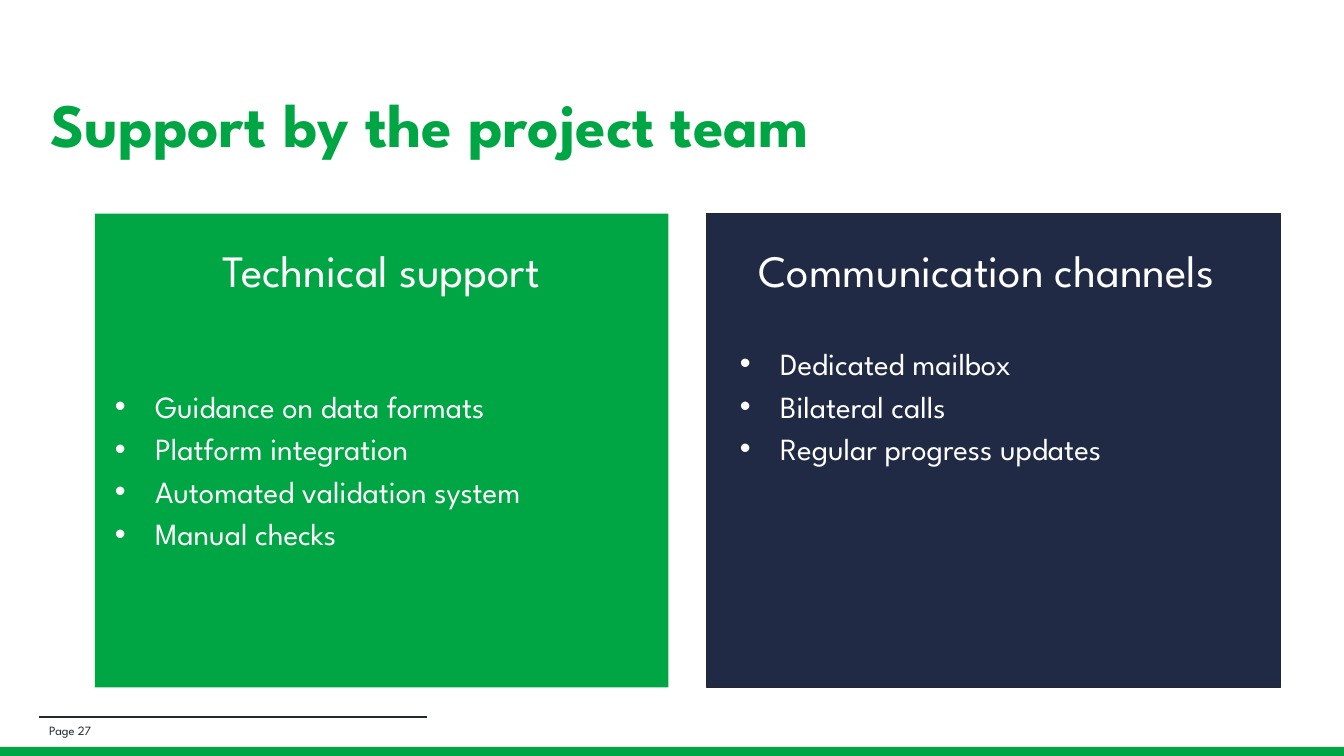
import pptx
import pptx.util
import pptx.dml.color
import pptx.enum.shapes
import pptx.enum.text
import pptx.oxml.ns
from lxml import etree
from pptx.util import Inches

COLORS = {"green": "00A643", "navy": "202A44", "ink": "24282A", "white": "FFFFFF"}
FONT = "League Spartan"
ALIGN = pptx.enum.text.PP_ALIGN
ANCHOR = pptx.enum.text.MSO_ANCHOR


def rgb(name):
    return pptx.dml.color.RGBColor.from_string(COLORS[name])


def write(frame, text, size, color, first=False, bold=False, bullet=False):
    para = frame.paragraphs[0] if first else frame.add_paragraph()
    para.text = text
    if bullet:
        props = para._p.get_or_add_pPr()
        props.set("marL", str(Inches(0.5)))
        props.set("indent", str(Inches(-0.4)))
        bullet_color = etree.SubElement(props, pptx.oxml.ns.qn("a:buClr"))
        etree.SubElement(bullet_color, pptx.oxml.ns.qn("a:srgbClr"), val=COLORS[color])
        etree.SubElement(props, pptx.oxml.ns.qn("a:buFont"), typeface="Arial")
        etree.SubElement(props, pptx.oxml.ns.qn("a:buChar"), char="•")
    para.font.name = FONT
    para.font.size = pptx.util.Pt(size)
    para.font.bold = bold
    para.font.color.rgb = rgb(color)
    return para


deck = pptx.Presentation()
deck.slide_width, deck.slide_height = Inches(13.33), Inches(7.5)
page = deck.slides.add_slide(deck.slide_layouts[6])

# Footer bar, rule and the two panels: place, fill, outline
rectangles = [
    ((-0.03, 7.41, 13.4, 0.13), "green", None),
    ((7.01, 2.12, 5.69, 4.7), "navy", "ink"),
    ((0.94, 2.12, 5.69, 4.7), "green", None),
]
for place, fill, outline in rectangles:
    panel = page.shapes.add_shape(
        pptx.enum.shapes.MSO_SHAPE.RECTANGLE, *map(Inches, place))
    panel.shadow.inherit = False
    panel.fill.solid()
    panel.fill.fore_color.rgb = rgb(fill)
    if outline:
        panel.line.color.rgb = rgb(outline)
        panel.line.width = pptx.util.Pt(0.75)
    else:
        panel.line.fill.background()

rule = page.shapes.add_connector(
    pptx.enum.shapes.MSO_CONNECTOR.STRAIGHT,
    Inches(0.39), Inches(7.11), Inches(4.24), Inches(7.11))
rule.line.color.rgb = rgb("ink")
rule.line.width = pptx.util.Pt(1.5)
etree.SubElement(rule._element.spPr, pptx.oxml.ns.qn("a:effectLst"))

# Title and page number
labels = [
    ((0.4, 0.82, 12.54, 0.9), "Support by the project team", 44, "green", True, 0.9),
    ((0.39, 7.15, 4.06, 0.19), "Page 27", 9, "ink", False, 1.0),
]
for place, text, size, color, bold, spacing in labels:
    box = page.shapes.add_textbox(*map(Inches, place))
    box.text_frame.word_wrap = True
    box.text_frame.vertical_anchor = ANCHOR.MIDDLE
    para = write(box.text_frame, text, size, color, first=True, bold=bold)
    para.line_spacing = spacing

# Panel texts: place, heading, gap below the heading in points, bullets
columns = [
    ((0.94, 2.28, 5.69, 4.09), "Technical support", 61,
     ["Guidance on data formats", "Platform integration",
      "Automated validation system", "Manual checks"]),
    ((7.14, 2.28, 5.29, 3.97), "Communication channels", 30.5,
     ["Dedicated mailbox", "Bilateral calls", "Regular progress updates"]),
]
for place, heading, gap, items in columns:
    box = page.shapes.add_textbox(*map(Inches, place))
    box.text_frame.word_wrap = True
    para = write(box.text_frame, heading, 32, "white", first=True)
    para.alignment = ALIGN.CENTER
    para.line_spacing = 1.15
    para.space_after = pptx.util.Pt(gap)
    for item in items:
        para = write(box.text_frame, item, 22, "white", bullet=True)
        para.line_spacing = 1.15

deck.save("out.pptx")
